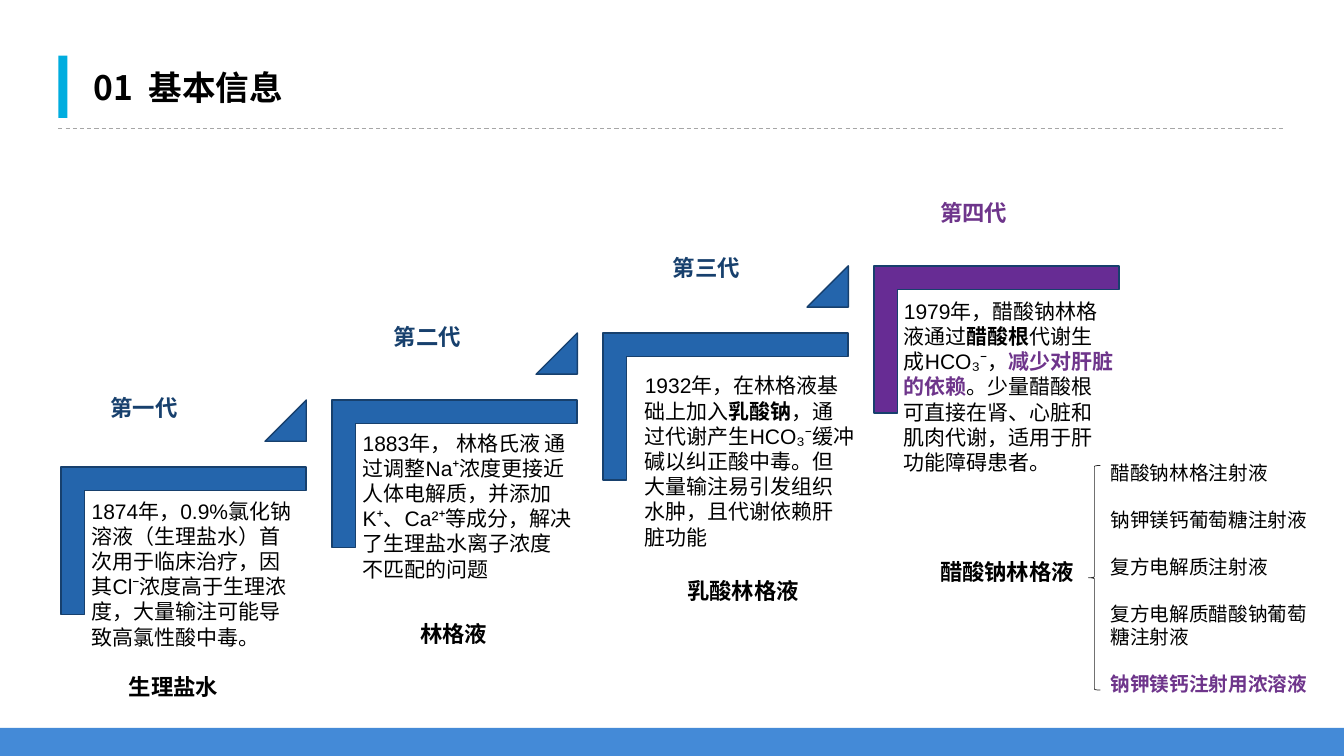
from typing import NamedTuple

from lxml.etree import SubElement
from pptx import Presentation
from pptx.dml.color import RGBColor
from pptx.enum.dml import MSO_LINE_DASH_STYLE as Dash
from pptx.enum.shapes import MSO_CONNECTOR as Connector, MSO_SHAPE as Preset
from pptx.enum.text import MSO_AUTO_SIZE as AutoSize
from pptx.oxml.ns import qn
from pptx.shapes.autoshape import Shape
from pptx.util import Cm, Pt

COLORS = {
    "black": "000000",
    "footer": "448AD7",
    "accent": "00ADDF",
    "rule": "A6A6A6",
    "brace": "262626",
    "blue": "2465AC",
    "navy": "17406D",
    "purple": "672C94",
    "violet": "6E358B",
}


class Box(NamedTuple):
    left: float
    top: float
    width: float
    height: float


class Phrase(NamedTuple):
    text: str
    bold: bool = False
    color: str = "black"


class Generation(NamedTuple):
    label: Phrase
    label_at: tuple[float, float]
    story: list[Phrase]
    story_at: tuple[float, float]
    fluid: str
    fluid_box: Box
    step_color: str = "blue"


GENERATIONS = [
    Generation(
        Phrase("第一代", True, "navy"), (2.54, 9.8),
        [Phrase("1874年，0.9%氯化钠溶液（生理盐水）首次用于临床治疗，因其Cl⁻浓度高于生理浓度，"
                "大量输注可能导致高氯性酸中毒。")],
        (2.16, 12.4), "生理盐水", Box(3, 16.84, 2.77, 0.94),
    ),
    Generation(
        Phrase("第二代", True, "navy"), (9.68, 8.03),
        [Phrase("1883年， 林格氏液 通过调整Na⁺浓度更接近人体电解质，并添加K⁺、Ca²⁺等成分，"
                "解决了生理盐水离子浓度不匹配的问题")],
        (8.99, 10.69), "林格液", Box(10.34, 15.49, 2.21, 0.94),
    ),
    Generation(
        Phrase("第三代", True, "navy"), (16.71, 6.27),
        [Phrase("1932年，在林格液基础上加入"),
         Phrase("乳酸钠", True),
         Phrase("，通过代谢产生HCO₃⁻缓冲碱以纠正酸中毒。"
                "但大量输注易引发组织水肿，且代谢依赖肝脏功能")],
        (16.1, 9.25), "乳酸林格液", Box(17.07, 14.43, 3.35, 0.94),
    ),
    Generation(
        Phrase("第四代", True, "violet"), (23.44, 4.9),
        [Phrase("1979年，醋酸钠林格液通过"),
         Phrase("醋酸根", True),
         Phrase("代谢生成HCO₃⁻，"),
         Phrase("减少对肝脏的依赖", True, "violet"),
         Phrase("。少量醋酸根可直接在肾、心脏和肌肉代谢，适用于肝功能障碍患者。")],
        (22.63, 7.37), "醋酸钠林格液", Box(23.44, 13.94, 3.91, 0.94), "purple",
    ),
]

INJECTIONS = [
    Phrase("醋酸钠林格注射液"),
    Phrase("钠钾镁钙葡萄糖注射液"),
    Phrase("复方电解质注射液"),
    Phrase("复方电解质醋酸钠葡萄糖注射液"),
    Phrase("钠钾镁钙注射用浓溶液", True, "violet"),
]

STEP_RUN, STEP_RISE = 6.83, 1.69

deck = Presentation()
deck.slide_width, deck.slide_height = Cm(33.87), Cm(19.05)
slide = deck.slides.add_slide(deck.slide_layouts[6])


def rgb(color: str) -> RGBColor:
    return RGBColor.from_string(COLORS[color])


def add_preset(preset: Preset, box: Box, fill: str | None = None,
               line: str | None = None, line_width: float = 1) -> Shape:
    shape = slide.shapes.add_shape(preset, *map(Cm, box))
    shape.shadow.inherit = False
    if fill:
        shape.fill.solid()
        shape.fill.fore_color.rgb = rgb(fill)
    else:
        shape.fill.background()
    if line:
        shape.line.color.rgb = rgb(line)
        shape.line.width = Pt(line_width)
    else:
        shape.line.fill.background()
    return shape


def add_text(box: Box, paragraphs: list[list[Phrase]], size: float, font: str = "Arial",
             wrap: bool = True, grow: bool = True, inset: float | None = None,
             gap: float = 0) -> None:
    frame = slide.shapes.add_textbox(*map(Cm, box)).text_frame
    frame.word_wrap = wrap
    frame.auto_size = AutoSize.SHAPE_TO_FIT_TEXT if grow else AutoSize.NONE
    if inset is not None:
        frame.margin_left = frame.margin_right = Cm(inset)
        frame.margin_top = frame.margin_bottom = Cm(inset)
    for index, phrases in enumerate(paragraphs):
        paragraph = frame.add_paragraph() if index else frame.paragraphs[0]
        paragraph.font.name = font
        paragraph.font.size = Pt(size)
        paragraph.space_before = Pt(gap if index else 0)
        for phrase in phrases:
            run = paragraph.add_run()
            run.text = phrase.text
            run.font.name = font
            run.font.size = Pt(size)
            run.font.bold = phrase.bold
            run.font.color.rgb = rgb(phrase.color)


def add_heading() -> None:
    add_preset(Preset.RECTANGLE, Box(0, 18.34, 33.87, 0.71), "footer")
    rule = slide.shapes.add_connector(Connector.STRAIGHT, Cm(1.47), Cm(3.23), Cm(32.39), Cm(3.23))
    rule.line.color.rgb = rgb("rule")
    rule.line.width = Pt(0.75)
    rule.line.dash_style = Dash.DASH
    SubElement(rule.element.spPr, qn("a:effectLst"))
    add_preset(Preset.RECTANGLE, Box(1.47, 1.4, 0.23, 1.57), "accent")
    add_text(Box(2.11, 1.57, 5.49, 1.27), [[Phrase("01  基本信息", True)]], 24,
             "Noto Sans CJK SC", wrap=False)


def add_generation(index: int, generation: Generation) -> None:
    run, rise = index * STEP_RUN, index * STEP_RISE
    step = add_preset(Preset.CORNER, Box(2.77 + run, 10.54 - rise, 3.71, 6.17),
                      generation.step_color, "navy")
    step.rotation = 90
    step.adjustments[0] = step.adjustments[1] = 0.16
    if index < len(GENERATIONS) - 1:
        rising = add_preset(Preset.ISOSCELES_TRIANGLE, Box(6.68 + run, 10.08 - rise, 1.04, 1.04),
                            "blue", "navy")
        rising.adjustments[0] = 1
    add_text(Box(*generation.story_at, 5.59, 4.9), [generation.story], 15, grow=False, inset=0.15)
    add_text(Box(*generation.label_at, 3.71, 0.94), [[generation.label]], 16)
    add_text(generation.fluid_box, [[Phrase(generation.fluid, True)]], 16, wrap=False)


def main() -> None:
    add_heading()
    for index, generation in enumerate(GENERATIONS):
        add_generation(index, generation)
    add_text(Box(27.74, 11.48, 5.51, 6.25), [[injection] for injection in INJECTIONS], 14, gap=16.8)
    add_preset(Preset.LEFT_BRACE, Box(27.43, 11.73, 0.3, 5.66), line="brace", line_width=0.5)
    deck.save("out.pptx")


if __name__ == "__main__":
    main()
